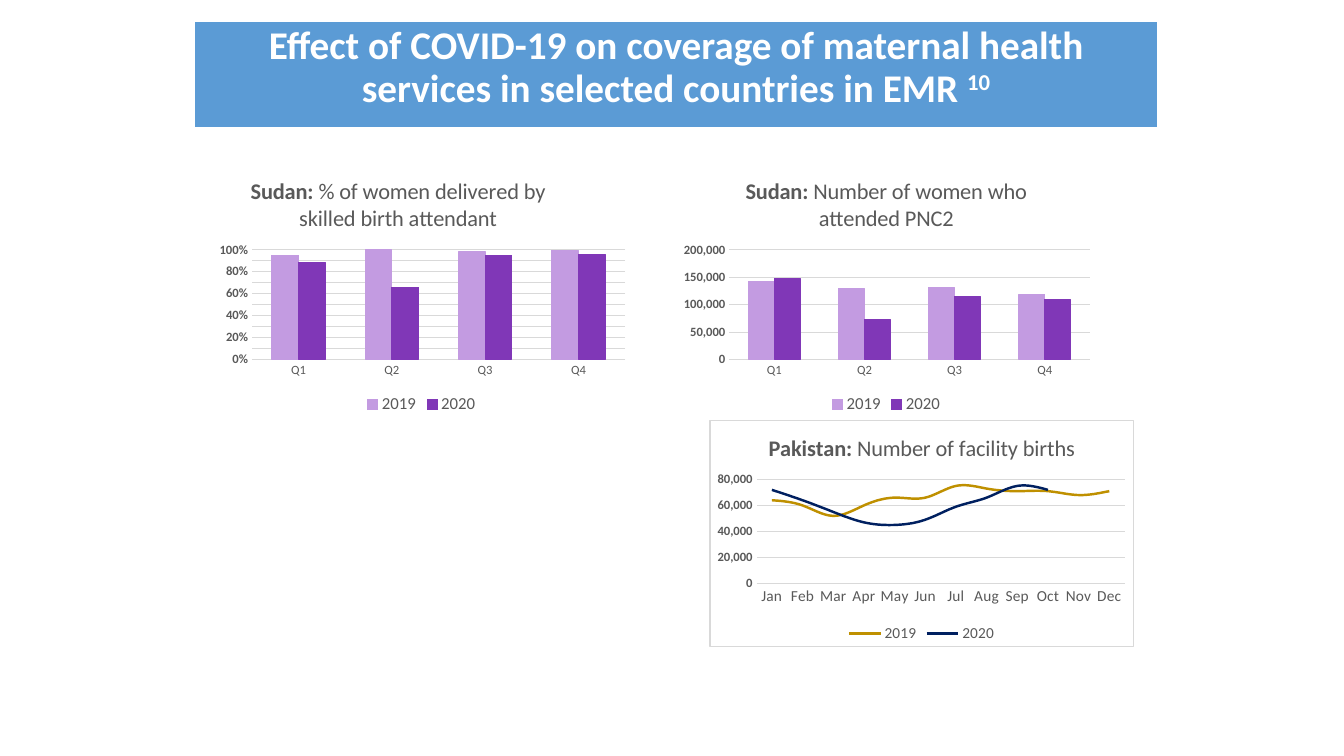
from lxml import etree
from pptx import Presentation
from pptx.chart.data import CategoryChartData
from pptx.dml.color import RGBColor
from pptx.enum.chart import XL_CHART_TYPE as CT, XL_LEGEND_POSITION as LP, XL_TICK_MARK as TM
from pptx.enum.shapes import MSO_SHAPE
from pptx.enum.text import MSO_ANCHOR, PP_ALIGN
from pptx.oxml import parse_xml
from pptx.oxml.ns import nsdecls, qn
from pptx.util import Cm, Pt

WHITE = RGBColor(0xFF, 0xFF, 0xFF)
BLUE = RGBColor(0x5B, 0x9B, 0xD5)
GREY = RGBColor(0x59, 0x59, 0x59)
GRID = RGBColor(0xD9, 0xD9, 0xD9)
LILAC = RGBColor(0xC3, 0x9B, 0xE1)
PURPLE = RGBColor(0x80, 0x37, 0xB7)
GOLD = RGBColor(0xBF, 0x90, 0x00)
NAVY = RGBColor(0x00, 0x20, 0x60)
FONT = "Calibri"


def style(font, size, color=GREY, bold=False):
    font.name, font.size, font.bold = FONT, Pt(size), bold
    font.color.rgb = color


def place(parent, index, inner=False, **box):
    for old in parent.findall(qn("c:layout")):
        parent.remove(old)
    layout = parse_xml(f"<c:layout {nsdecls('c')}><c:manualLayout/></c:layout>")
    manual = layout[0]
    if inner:
        etree.SubElement(manual, qn("c:layoutTarget")).set("val", "inner")
    for axis in "xy":
        etree.SubElement(manual, qn(f"c:{axis}Mode")).set("val", "edge")
    for name, value in box.items():
        etree.SubElement(manual, qn(f"c:{name}")).set("val", str(value))
    parent.insert(index, layout)


QUARTERS = ["Q1", "Q2", "Q3", "Q4"]
MONTHS = ["Jan", "Feb", "Mar", "Apr", "May", "Jun",
          "Jul", "Aug", "Sep", "Oct", "Nov", "Dec"]

CHARTS = [
    dict(kind=CT.COLUMN_CLUSTERED, at=(5.28, 4.11, 10.69, 6.43), cats=QUARTERS,
         title=("Sudan:", " % of women delivered by skilled birth attendant"),
         title_at=dict(x=0.09, y=0.04), plot=dict(x=0.1, y=0.34, w=0.88, h=0.43),
         top=1, step=0.1, fmt="0%", cat_size=9, legend_size=12, colors=(LILAC, PURPLE),
         values=([0.95, 1, 0.98, 0.99], [0.88, 0.66, 0.95, 0.96])),
    dict(kind=CT.COLUMN_CLUSTERED, at=(16.99, 4.11, 10.69, 6.43), cats=QUARTERS,
         title=("Sudan:", " Number of women who attended PNC2"),
         title_at=None, plot=dict(x=0.13, y=0.34, w=0.85, h=0.43),
         top=200000, step=50000, fmt="#,##0", cat_size=9, legend_size=12,
         colors=(LILAC, PURPLE),
         values=([143000, 129000, 131000, 119000], [147000, 72000, 115000, 109000])),
    dict(kind=CT.LINE, at=(17.88, 10.59, 10.69, 5.72), cats=MONTHS,
         title=("Pakistan:", " Number of facility births"),
         title_at=None, plot=dict(x=0.11, y=0.26, w=0.87, h=0.46),
         top=80000, step=20000, fmt="#,##0", cat_size=11, legend_size=11,
         colors=(GOLD, NAVY),
         values=([64000, 60000, 52000, 60000, 66000, 66000,
                  75000, 73000, 71000, 71000, 68000, 71000],
                 [72000, 64000, 55000, 47000, 45000, 49000,
                  59000, 66000, 75000, 72000, None, None])),
]

prs = Presentation()
prs.slide_width, prs.slide_height = Cm(33.87), Cm(19.05)
s = prs.slides.add_slide(prs.slide_layouts[6])

for spec_row in CHARTS:
    data = CategoryChartData(number_format=spec_row["fmt"])
    data.categories = spec_row["cats"]
    for year, values in zip(("2019", "2020"), spec_row["values"]):
        data.add_series(year, values)
    chart = s.shapes.add_chart(spec_row["kind"], *map(Cm, spec_row["at"]), data).chart
    chart.font.name, chart.font.size = FONT, Pt(10)

    chart.has_title = True
    p = chart.chart_title.text_frame.paragraphs[0]
    for text, bold in zip(spec_row["title"], (True, False)):
        r = p.add_run()
        r.text = text
        style(r.font, 16, bold=bold)
    if spec_row["title_at"]:
        place(chart.chart_title._element, 1, **spec_row["title_at"])

    chart.has_legend = True
    chart.legend.position = LP.BOTTOM
    chart.legend.include_in_layout = False
    style(chart.legend.font, spec_row["legend_size"])

    cat, val = chart.category_axis, chart.value_axis
    for axis in (cat, val):
        axis.major_tick_mark = axis.minor_tick_mark = TM.NONE
    style(cat.tick_labels.font, spec_row["cat_size"])
    style(val.tick_labels.font, 9, bold=True)
    val.minimum_scale, val.maximum_scale = 0, spec_row["top"]
    val.major_unit = spec_row["step"]
    val.tick_labels.number_format = spec_row["fmt"]
    val.tick_labels.number_format_is_linked = False
    val.format.line.fill.background()
    for line in (cat.format.line, val.major_gridlines.format.line):
        line.color.rgb = GRID
        line.width = Pt(0.75)

    plot = chart.plots[0]
    plot.vary_by_categories = False
    is_line = spec_row["kind"] == CT.LINE
    for series, color in zip(plot.series, spec_row["colors"]):
        series.format.line.color.rgb = color
        series.format.line.width = Pt(1.75 if is_line else 0.75)
        if is_line:
            series.smooth = True
        else:
            series.format.fill.solid()
            series.format.fill.fore_color.rgb = color
    root = chart._chartSpace
    body = root.find(qn("c:chart"))
    place(body.find(qn("c:plotArea")), 0, inner=True, **spec_row["plot"])
    if is_line:
        body.addnext(parse_xml(
            f'<c:spPr {nsdecls("c", "a")}><a:solidFill><a:srgbClr val="{WHITE}"/></a:solidFill>'
            f'<a:ln w="9525"><a:solidFill><a:srgbClr val="{GRID}"/></a:solidFill></a:ln></c:spPr>'))
        if root.find(qn("c:roundedCorners")) is None:
            root.find(qn("c:date1904")).addnext(
                parse_xml(f'<c:roundedCorners {nsdecls("c")} val="0"/>'))
    else:
        plot.gap_width = 150

sp = s.shapes.add_shape(MSO_SHAPE.RECTANGLE, Cm(4.88), Cm(0.53), Cm(24.31), Cm(2.69))
sp.shadow.inherit = False
sp.fill.solid()
sp.fill.fore_color.rgb = BLUE
sp.line.color.rgb = WHITE
sp.line.width = Pt(1.5)
tf = sp.text_frame
tf.word_wrap = True
tf.vertical_anchor = MSO_ANCHOR.TOP
p = tf.paragraphs[0]
p.alignment = PP_ALIGN.CENTER
p.line_spacing = 0.9
heading = "Effect of COVID-19 on coverage of maternal health services in selected countries in EMR "
for text, baseline in ((heading, 0), ("10", 30000)):
    r = p.add_run()
    r.text = text
    style(r.font, 28, WHITE, True)
    if baseline:
        r._r.get_or_add_rPr().set("baseline", str(baseline))

prs.save("out.pptx")
